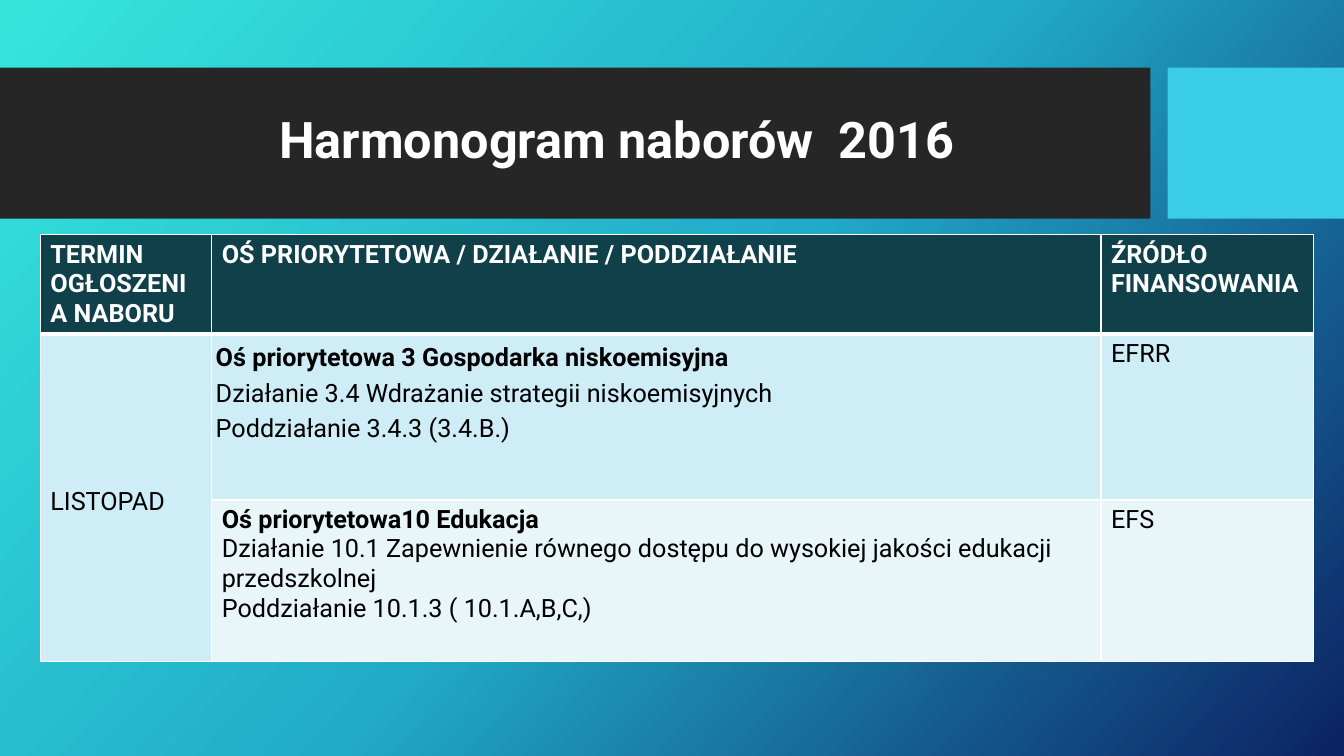
from copy import deepcopy

from pptx import Presentation
from pptx.dml.color import RGBColor
from pptx.enum.shapes import MSO_SHAPE
from pptx.enum.text import MSO_ANCHOR, MSO_AUTO_SIZE, PP_ALIGN
from pptx.oxml import parse_xml
from pptx.oxml.ns import nsdecls
from pptx.util import Inches, Pt

RECT = MSO_SHAPE.RECTANGLE
MIDDLE = MSO_ANCHOR.MIDDLE
LEFT = PP_ALIGN.LEFT
FIXED = MSO_AUTO_SIZE.NONE


class Theme:
    font = "Roboto"
    title, body = Pt(36), Pt(18)
    white, black = "FFFFFF", "000000"
    bar, accent = "262626", "39CDE7"
    head, band, pale = "10404A", "CEEDF6", "E8F6FA"
    stops = (0, "36E6DD"), (50, "21ABC8"), (100, "0C2263")


def style(para, size, color, bold):
    for run in para.runs:
        font = run.font
        font.name, font.size, font.bold = Theme.font, size, bold
        font.color.rgb = RGBColor.from_string(color)


def frame(cell, widths):
    """Draw white borders; widths maps each side to points."""
    props = cell._tc.get_or_add_tcPr()
    for i, (side, width) in enumerate(widths.items()):
        props.insert(i, parse_xml(
            f'<a:ln{side} {nsdecls("a")} w="{Pt(width)}"><a:solidFill>'
            f'<a:srgbClr val="{Theme.white}"/></a:solidFill></a:ln{side}>'))


deck = Presentation()
deck.slide_width, deck.slide_height = Inches(13.33), Inches(7.5)
slide = deck.slides.add_slide(deck.slide_layouts[5])

# Background
fill = slide.background.fill
fill.gradient()
fill.gradient_angle = 360 - 42
first = fill.gradient_stops[0]._gs
first.addnext(deepcopy(first))
for stop, (pos, color) in zip(fill.gradient_stops, Theme.stops):
    stop.position = pos / 100
    stop.color.rgb = RGBColor.from_string(color)

# Title band
for x, width, color in (0, 11.41, Theme.bar), (11.58, 1.75, Theme.accent):
    bar = slide.shapes.add_shape(
        RECT, Inches(x), Inches(0.67), Inches(width), Inches(1.5))
    bar.shadow.inherit = False
    bar.fill.solid()
    bar.fill.fore_color.rgb = RGBColor.from_string(color)
    bar.line.fill.background()

title = slide.shapes.title
title.element.getparent().append(title.element)
title.left, title.top = Inches(0.93), Inches(0.82)
title.width, title.height = Inches(10.51), Inches(1.18)
text = title.text_frame
text.text = "Harmonogram naborów  2016"
text.auto_size, text.vertical_anchor = FIXED, MIDDLE
para = text.paragraphs[0]
para.alignment, para.line_spacing = LEFT, 0.9
para._p.get_or_add_pPr().set("marL", str(Inches(1.74)))
style(para, Theme.title, Theme.white, True)

# Schedule
rows = [
    ["TERMIN OGŁOSZENIA NABORU",
     "OŚ PRIORYTETOWA / DZIAŁANIE / PODDZIAŁANIE",
     "ŹRÓDŁO FINANSOWANIA"],
    ["LISTOPAD",
     "Oś priorytetowa 3 Gospodarka niskoemisyjna\n"
     "Działanie 3.4 Wdrażanie strategii niskoemisyjnych\n"
     "Poddziałanie 3.4.3 (3.4.B.)",
     "EFRR"],
    ["",
     "Oś priorytetowa10 Edukacja\n"
     "Działanie 10.1 Zapewnienie równego dostępu do wysokiej jakości "
     "edukacji przedszkolnej\n"
     "Poddziałanie 10.1.3 ( 10.1.A,B,C,)",
     "EFS"],
]
fills = Theme.head, Theme.band, Theme.pale
table = slide.shapes.add_table(
    3, 3, Inches(0.4), Inches(2.33), Inches(12.63), Inches(4.22)).table
table.horz_banding = False
for col, width in zip(table.columns, (1.7, 8.82, 2.11)):
    col.width = Inches(width)
for row, height in zip(table.rows, (0.97, 1.65, 1.6)):
    row.height = Inches(height)

for r, row in enumerate(rows):
    for c, words in enumerate(row):
        cell = table.cell(r, c)
        cell.text = words
        cell.fill.solid()
        cell.fill.fore_color.rgb = RGBColor.from_string(fills[r])
        frame(cell, {"L": 1, "R": 1, "T": 3 if r == 1 else 1,
                     "B": 3 if r == 0 else 1})
        for n, para in enumerate(cell.text_frame.paragraphs):
            style(para, Theme.body, Theme.black if r else Theme.white,
                  r == 0 or (c == 1 and n == 0))

month = table.cell(1, 0)
month.merge(table.cell(2, 0))
month.vertical_anchor = MIDDLE
month.margin_top = Inches(0.13)

axis = table.cell(1, 1)
axis.margin_left = axis.margin_right = Inches(0.04)
axis.margin_top = axis.margin_bottom = Inches(0.04)
for para in axis.text_frame.paragraphs:
    para.line_spacing = 1.2

deck.save("out.pptx")
